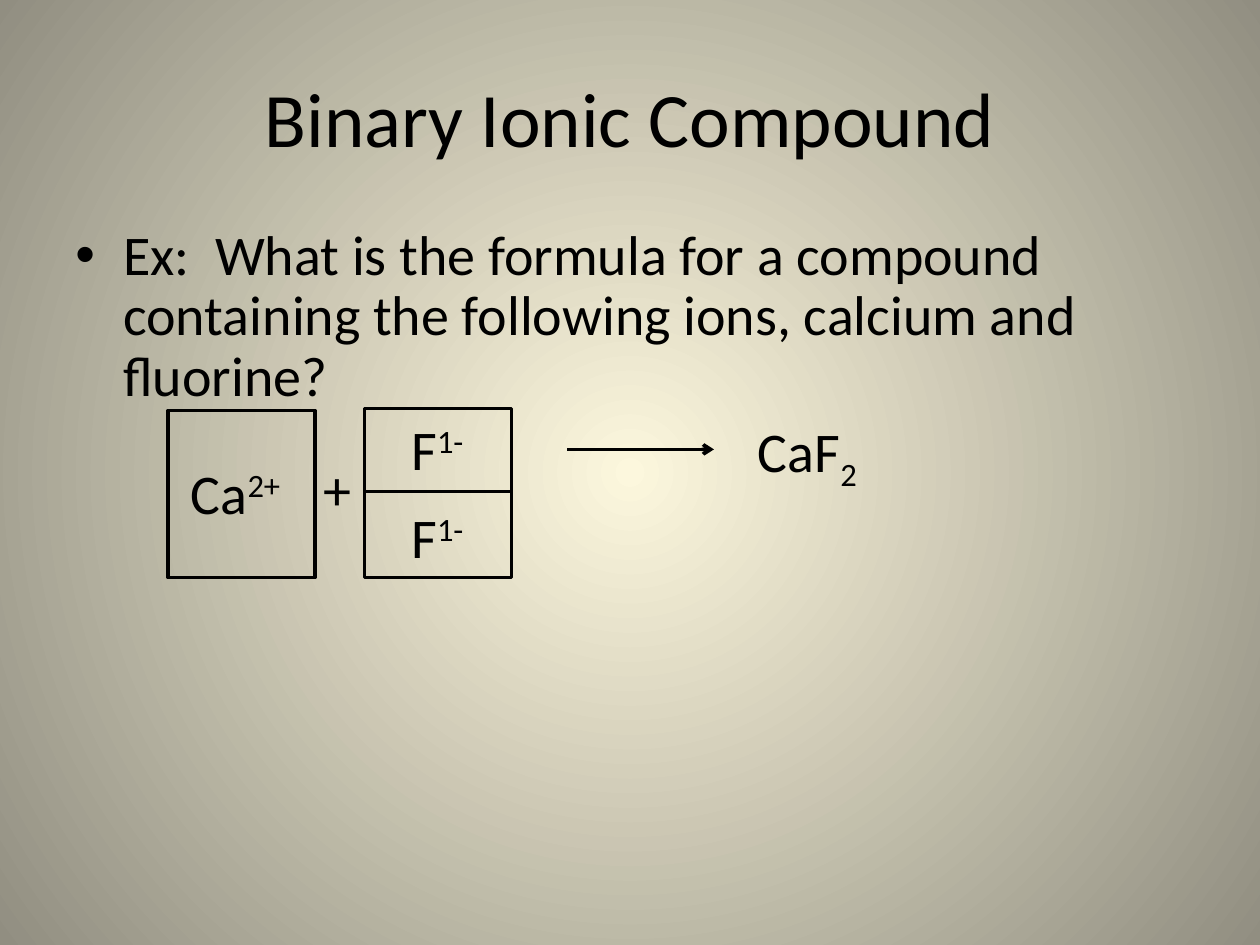
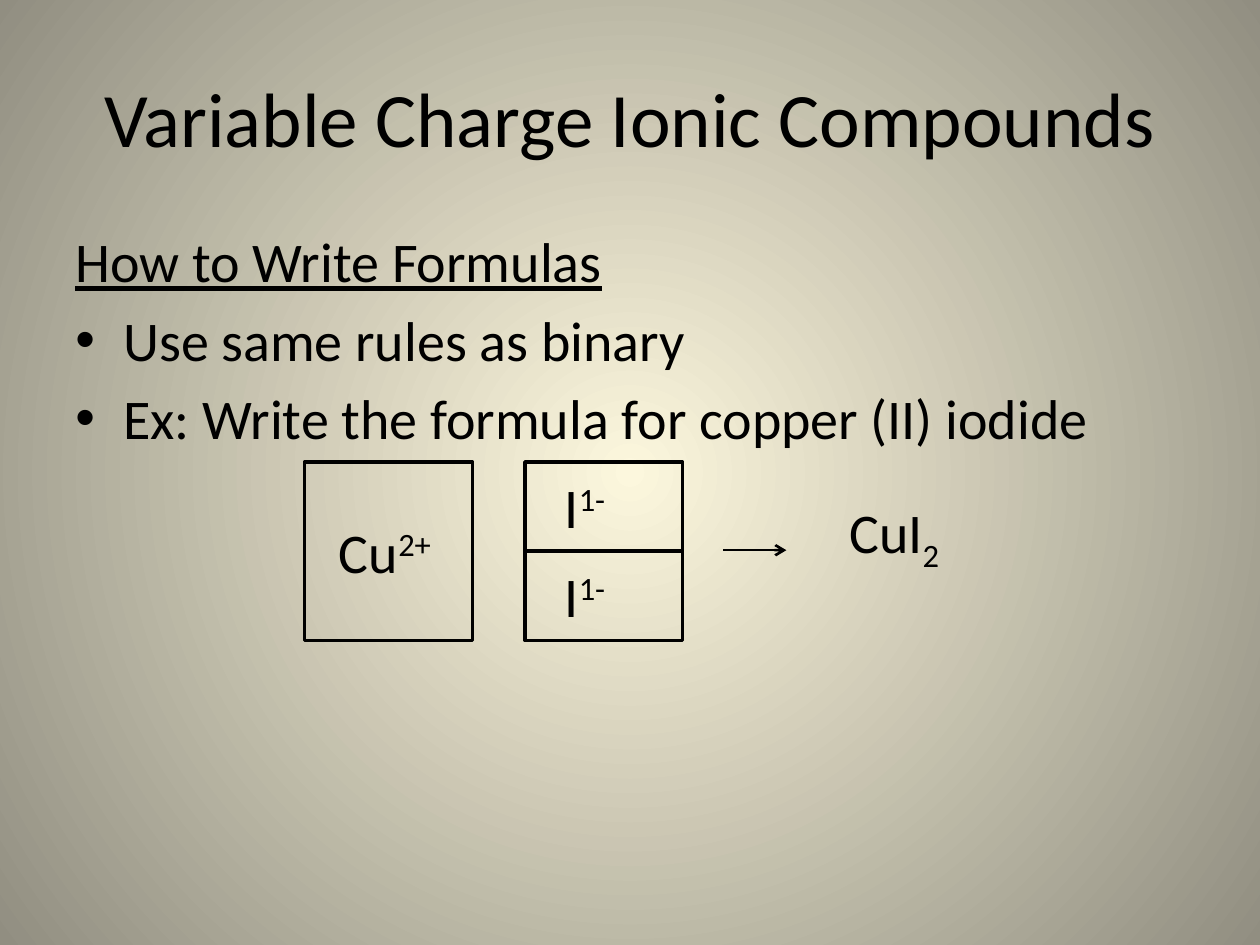
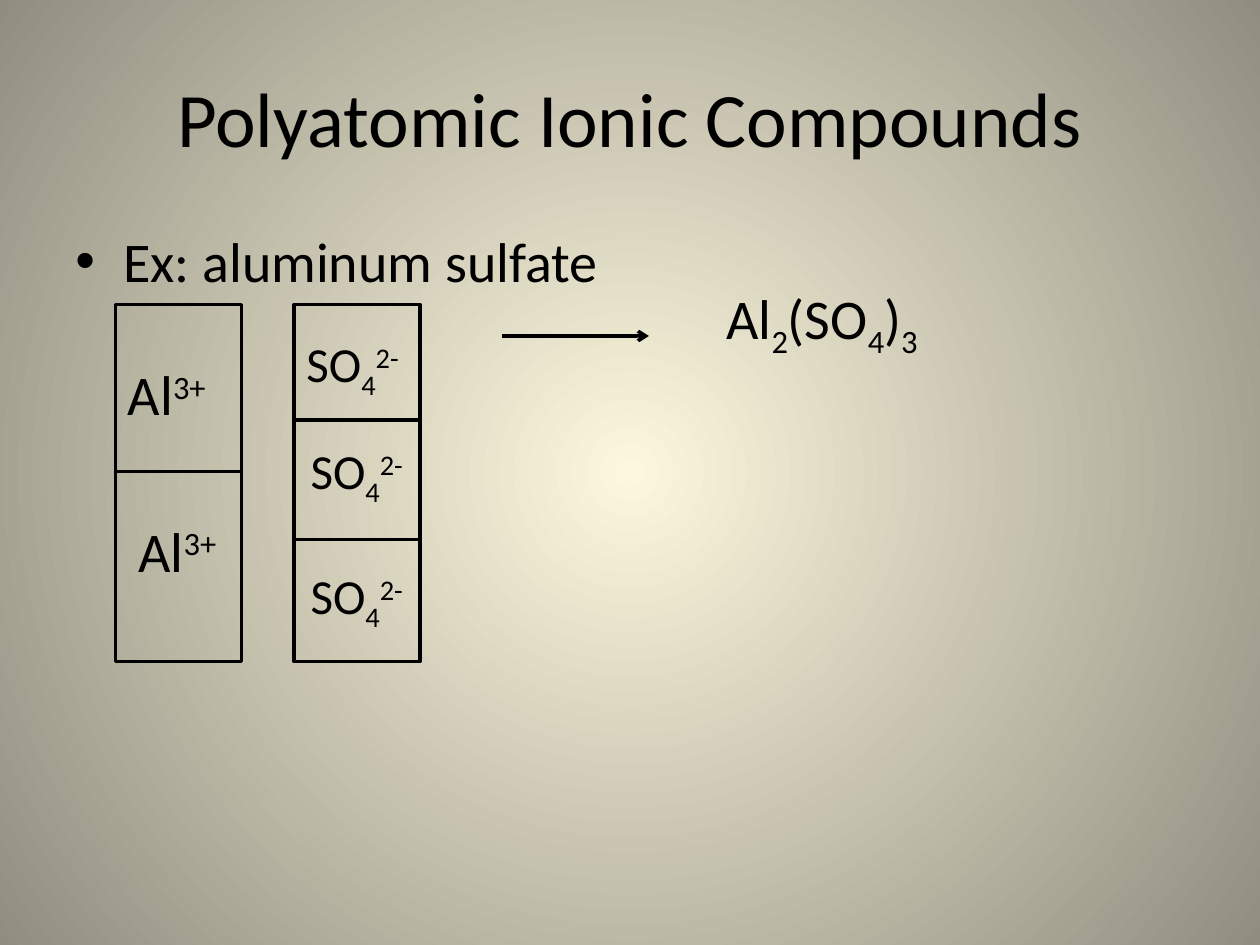
"""Build three slides on writing formulas for ionic compounds."""
from dataclasses import dataclass

from lxml.etree import SubElement
from pptx import Presentation
from pptx.dml.color import RGBColor
from pptx.enum.shapes import MSO_CONNECTOR, MSO_SHAPE
from pptx.enum.text import MSO_ANCHOR, PP_ALIGN
from pptx.oxml.ns import qn
from pptx.util import Inches, Pt

BLACK = RGBColor(0x00, 0x00, 0x00)
CREAM = RGBColor(0xFC, 0xF7, 0xDD)
TAUPE = RGBColor(0x91, 0x8E, 0x81)
FONT = "Calibri"
WIDTH, HEIGHT = Inches(10), Inches(7.5)
COLUMNS = 120
UNIT = WIDTH / COLUMNS
BODY_SIZE = 32
INDENT = Inches(0.38)


@dataclass(frozen=True)
class Term:
    """A piece of a formula, with its baseline shift in percent."""
    text: str
    shift: int = 0


@dataclass(frozen=True)
class Label:
    """A formula placed by column and row."""
    col: float
    row: float
    width: float
    formula: tuple[Term, ...]
    size: int = BODY_SIZE


@dataclass(frozen=True)
class Stack:
    """Ion boxes of one width, one under another."""
    col: float
    row: float
    width: float
    heights: tuple[float, ...]


@dataclass(frozen=True)
class Arrow:
    """A horizontal reaction arrow."""
    col: float
    row: float
    length: float
    weight: float = 2


@dataclass(frozen=True)
class Line:
    """A line of body text."""
    text: str
    bullet: bool = True
    underline: bool = False
    spacing: float = 1


@dataclass(frozen=True)
class Example:
    """The content of one slide."""
    title: str
    lines: tuple[Line, ...]
    arrow: Arrow
    stacks: tuple[Stack, ...]
    labels: tuple[Label, ...]


def sub(text: str) -> Term:
    """Return a subscript."""
    return Term(text, -25)


def sup(text: str) -> Term:
    """Return a superscript."""
    return Term(text, 30)


def grid(count: float) -> int:
    """Convert grid columns or rows to a length."""
    return round(count * UNIT)


def style(r, size: int) -> None:
    """Apply the shared font to a run."""
    r.font.name, r.font.size = FONT, Pt(size)
    r.font.color.rgb = BLACK


def paint_background(prs) -> None:
    """Give the master a circular gradient."""
    fill = prs.slide_master.background.fill
    fill.gradient()
    for stop, color, position in zip(fill.gradient_stops, (CREAM, TAUPE), (0, 1)):
        stop.color.rgb, stop.position = color, position
    grad = prs.slide_master.element.find(".//" + qn("a:gradFill"))
    lin = grad.find(qn("a:lin"))
    if lin is not None:
        grad.remove(lin)
    circle = SubElement(grad, qn("a:path"), {"path": "circle"})
    SubElement(circle, qn("a:fillToRect"), dict.fromkeys("ltrb", "50000"))


def add_title(s, text: str) -> None:
    """Place and format the title."""
    sp = s.shapes.title
    sp.left, sp.top, sp.width, sp.height = grid(6), grid(3.6), grid(108), grid(15)
    tf = sp.text_frame
    tf.text = text
    tf.vertical_anchor = MSO_ANCHOR.MIDDLE
    p = tf.paragraphs[0]
    p.alignment = PP_ALIGN.CENTER
    style(p.runs[0], 44)


def add_body(s, lines: tuple[Line, ...]) -> None:
    """Write the body text with hanging bullets."""
    tf = s.shapes.add_textbox(grid(6), grid(21), grid(108), grid(59.4)).text_frame
    tf.word_wrap = True
    for i, line in enumerate(lines):
        p = tf.add_paragraph() if i else tf.paragraphs[0]
        p.text = line.text
        p.space_before, p.line_spacing = Pt(BODY_SIZE * 0.2), line.spacing
        style(p.runs[0], BODY_SIZE)
        p.runs[0].font.underline = line.underline
        if line.bullet:
            props = p._p.get_or_add_pPr()
            props.set("marL", str(INDENT))
            props.set("indent", str(-INDENT))
            SubElement(props, qn("a:buFont"), {"typeface": "Arial"})
            SubElement(props, qn("a:buChar"), {"char": "•"})


def add_arrow(s, arrow: Arrow) -> None:
    """Draw a reaction arrow."""
    y = grid(arrow.row)
    sp = s.shapes.add_connector(MSO_CONNECTOR.STRAIGHT, grid(arrow.col), y,
                                grid(arrow.col + arrow.length), y)
    sp.line.color.rgb, sp.line.width = BLACK, Pt(arrow.weight)
    SubElement(sp.line._get_or_add_ln(), qn("a:tailEnd"), {"type": "arrow"})
    SubElement(sp._element.spPr, qn("a:effectLst"))


def add_stack(s, stack: Stack) -> None:
    """Draw a stack of open boxes."""
    for i, height in enumerate(stack.heights):
        row = stack.row + sum(stack.heights[:i])
        sp = s.shapes.add_shape(MSO_SHAPE.RECTANGLE, grid(stack.col), grid(row),
                                grid(stack.width), grid(height))
        sp.shadow.inherit = False
        sp.fill.background()
        sp.line.color.rgb, sp.line.width = BLACK, Pt(2)


def add_label(s, label: Label) -> None:
    """Write a formula with its raised and lowered terms."""
    tf = s.shapes.add_textbox(grid(label.col), grid(label.row), grid(label.width),
                              grid(label.size * 0.24)).text_frame
    tf.word_wrap = True
    for term in label.formula:
        r = tf.paragraphs[0].add_run()
        r.text = term.text
        style(r, label.size)
        if term.shift:
            r.font._element.set("baseline", str(term.shift * 1000))


def add_example(prs, example: Example) -> None:
    """Add one slide."""
    s = prs.slides.add_slide(prs.slide_layouts.get_by_name("Title Only"))
    add_title(s, example.title)
    add_body(s, example.lines)
    add_arrow(s, example.arrow)
    for stack in example.stacks:
        add_stack(s, stack)
    for label in example.labels:
        add_label(s, label)


FLUORIDE = (Term("F"), sup("1-"))
IODIDE = (Term("I"), sup("1-"))
ALUMINUM = (Term("Al"), sup("3+"))
SULFATE = (Term("SO"), sub("4"), sup("2-"))

EXAMPLES = (
    Example(
        "Binary Ionic Compound",
        (Line("Ex:  What is the formula for a compound containing the following "
              "ions, calcium and fluorine?", spacing=0.9),),
        Arrow(54, 42.8, 14),
        (Stack(16, 39.1, 14, (15.9,)), Stack(34.7, 38.9, 14, (7.9, 8.2))),
        (Label(71, 39.1, 22, (Term("CaF"), sub("2"))),
         Label(17, 43.1, 12, (Term("Ca"), sup("2+"))),
         Label(29.6, 42.7, 5, (Term("+"),)),
         Label(38, 38.9, 10, FLUORIDE),
         Label(38, 47.3, 10, FLUORIDE)),
    ),
    Example(
        "Variable Charge Ionic Compounds",
        (Line("How to Write Formulas", bullet=False, underline=True),
         Line("Use same rules as binary"),
         Line("Ex: Write the formula for copper (II) iodide")),
        Arrow(68.9, 52.4, 6, 1.5),
        (Stack(29, 44, 16, (17,)), Stack(50, 44, 15, (8.5, 8.5))),
        (Label(79.7, 46.8, 13, (Term("CuI"), sub("2"))),
         Label(31.1, 48.7, 12, (Term("Cu"), sup("2+"))),
         Label(52.6, 44.4, 10, IODIDE),
         Label(52.6, 52.9, 10, IODIDE)),
    ),
    Example(
        "Polyatomic Ionic Compounds",
        (Line("Ex: aluminum sulfate"),),
        Arrow(47.8, 32, 14),
        (Stack(11, 29, 12, (15.9, 18.1)), Stack(28, 29, 12, (11, 11.4, 11.6))),
        (Label(68, 26.4, 29, (Term("Al"), sub("2"), Term("(SO"), sub("4"),
                              Term(")"), sub("3"))),
         Label(11, 33.7, 13.7, ALUMINUM),
         Label(12, 48.6, 13.7, ALUMINUM),
         Label(28, 31.2, 15, SULFATE, 28),
         Label(28.4, 41.4, 15, SULFATE, 28),
         Label(28.4, 53.3, 15, SULFATE, 28)),
    ),
)


def main() -> None:
    """Build and save the presentation."""
    prs = Presentation()
    prs.slide_width, prs.slide_height = WIDTH, HEIGHT
    paint_background(prs)
    for example in EXAMPLES:
        add_example(prs, example)
    prs.save("out.pptx")


if __name__ == "__main__":
    main()
